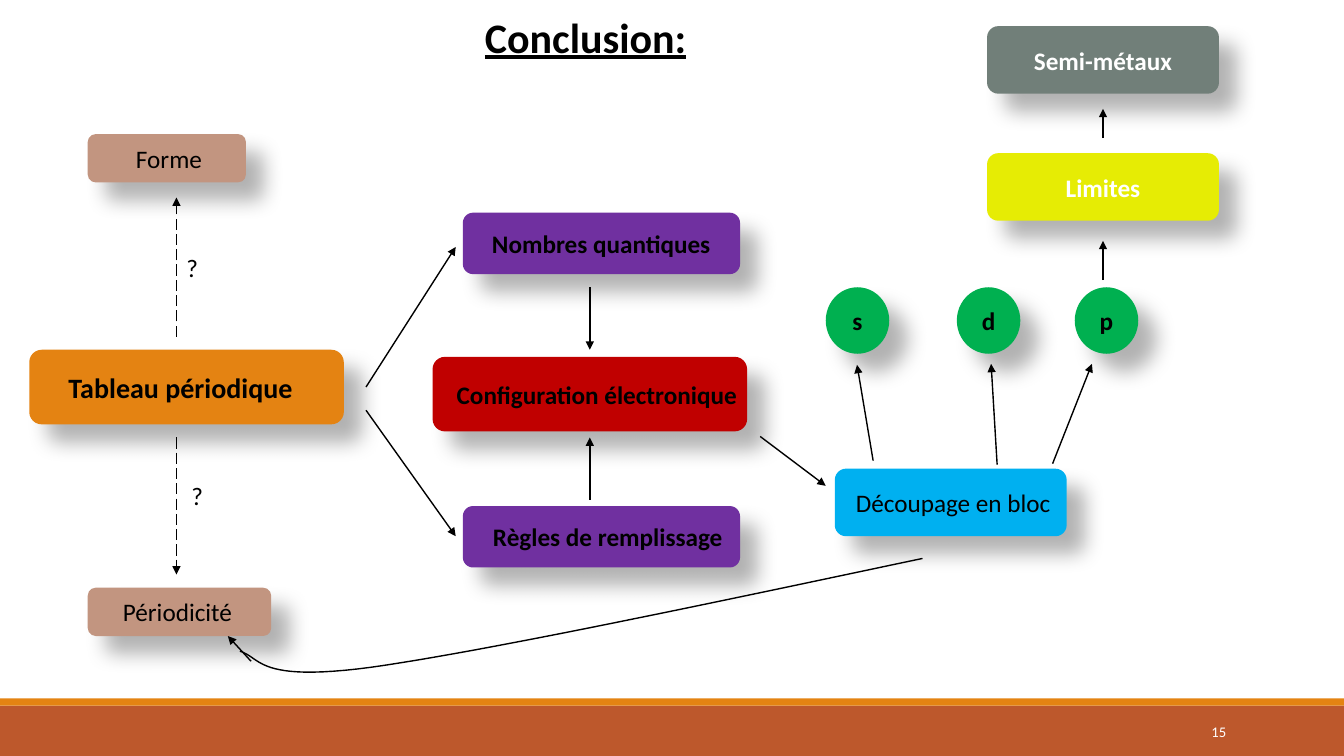
from dataclasses import dataclass

from lxml.etree import SubElement
from pptx import Presentation
from pptx.dml.color import RGBColor
from pptx.enum.dml import MSO_LINE
from pptx.enum.shapes import MSO_CONNECTOR, MSO_SHAPE
from pptx.enum.text import MSO_ANCHOR, MSO_AUTO_SIZE, PP_ALIGN
from pptx.oxml.ns import qn
from pptx.util import Inches, Pt


@dataclass(frozen=True)
class Theme:
    font: str = "Calibri"
    black: str = "000000"
    white: str = "FFFFFF"
    orange: str = "E48312"
    rust: str = "BD582C"
    purple: str = "7030A0"
    tan: str = "C29580"
    red: str = "C00000"
    blue: str = "00B0F0"
    green: str = "00B050"
    yellow: str = "E6EC04"
    grey: str = "717F79"
    title_size: float = 30
    main_size: float = 20
    body_size: float = 18
    number_size: float = 10.5
    line_width: float = 1


THEME = Theme()
TITLE = "Conclusion:"
PAGE_NUMBER = "15"
BANDS = [(7, 0.5, THEME.rust), (6.93, 0.07, THEME.orange)]  # top, height, fill

# label, (left, top, width, height), fill, text colour, bold, left edge of text (None: centred)
BOXES = [
    ("Tableau périodique", (0.29, 3.47, 3.12, 0.74), THEME.orange, THEME.black, True, 0.68),
    ("Nombres quantiques", (4.59, 2.11, 2.75, 0.61), THEME.purple, THEME.black, True, 4.88),
    ("Règles de remplissage", (4.59, 5.02, 2.75, 0.61), THEME.purple, THEME.black, True, 4.89),
    ("Configuration électronique", (4.29, 3.54, 3.12, 0.74), THEME.red, THEME.black, True, 4.53),
    ("Forme", (0.87, 1.33, 1.57, 0.48), THEME.tan, THEME.black, False, 1.35),
    ("Périodicité", (0.87, 5.83, 1.82, 0.48), THEME.tan, THEME.black, False, 1.22),
    ("Découpage en bloc", (8.28, 4.65, 2.3, 0.67), THEME.blue, THEME.black, False, 8.49),
    ("Limites", (9.79, 1.52, 2.3, 0.67), THEME.yellow, THEME.white, True, None),
    ("Semi-métaux", (9.79, 0.26, 2.3, 0.67), THEME.grey, THEME.white, True, None),
]
MAIN_BOX = "Tableau périodique"

BLOCKS = [("s", 8.19), ("d", 9.49), ("p", 10.66)]
BLOCK_TOP, BLOCK_WIDTH, BLOCK_HEIGHT = 2.85, 0.63, 0.66

QUESTIONS = [(1.75, 2.45), (1.8, 4.72)]
DASHED_ARROWS = [((1.75, 3.34), (1.75, 1.96)), ((1.75, 4.34), (1.75, 5.7))]
ARROWS = [
    ((3.63, 3.84), (4.52, 2.45)),
    ((3.63, 4.07), (4.52, 5.32)),
    ((5.85, 2.85), (5.85, 3.47)),
    ((5.85, 4.96), (5.85, 4.34)),
    ((7.54, 4.33), (8.19, 4.82)),
    ((2.49, 6.56), (2.26, 6.31)),
    ((8.66, 4.57), (8.5, 3.62)),
    ((9.89, 4.61), (9.83, 3.61)),
    ((10.44, 4.6), (10.83, 3.61)),
    ((10.94, 2.78), (10.94, 2.39)),
    ((10.94, 1.37), (10.94, 1.08)),
]
RETURN_CURVE = [
    ((9.15, 5.54), (6.98, 6), (4.81, 6.46), (3.68, 6.62)),
    ((3.68, 6.62), (2.55, 6.77), (2.6, 6.53), (2.38, 6.46)),
]
CURVE_STEPS = 24
ROUND_INSET = 0.05  # text inset of a rounded rectangle, as a share of its height


def write(frame, text, size, color=THEME.black, bold=False, align=PP_ALIGN.LEFT):
    frame.text = text
    frame.word_wrap = True
    para = frame.paragraphs[0]
    para.alignment = align
    font = para.runs[0].font
    font.name, font.size, font.bold = THEME.font, Pt(size), bold
    font.color.rgb = RGBColor.from_string(color)
    return font


def add_filled(page, kind, bounds, fill):
    shape = page.shapes.add_shape(kind, *map(Inches, bounds))
    shape.shadow.inherit = False
    shape.fill.solid()
    shape.fill.fore_color.rgb = RGBColor.from_string(fill)
    shape.line.fill.background()
    return shape


def add_shadow(shape):
    """Cast a soft black shadow towards the lower right."""
    effects = shape._element.spPr.find(qn("a:effectLst"))
    shadow = SubElement(effects, qn("a:outerShdw"), blurRad=str(Pt(15)), dist=str(Pt(18)),
                        dir=str(45 * 60000), algn="tl", rotWithShape="0")
    color = SubElement(shadow, qn("a:srgbClr"), val=THEME.black)
    SubElement(color, qn("a:alpha"), val="30000")


def add_label_shape(page, kind, label, bounds, fill, color, bold, text_left=None):
    shape = add_filled(page, kind, bounds, fill)
    add_shadow(shape)
    frame = shape.text_frame
    size = THEME.main_size if label == MAIN_BOX else THEME.body_size
    write(frame, label, size, color, bold, PP_ALIGN.CENTER if text_left is None else PP_ALIGN.LEFT)
    frame.vertical_anchor = MSO_ANCHOR.MIDDLE
    left, _, _, height = bounds
    frame.margin_left = frame.margin_right = frame.margin_top = frame.margin_bottom = 0
    if text_left is not None:
        frame.margin_left = Inches(text_left - left - ROUND_INSET * height)


def style_line(line):
    line.color.rgb = RGBColor.from_string(THEME.black)
    line.width = Pt(THEME.line_width)


def add_arrow(page, start, end, dashed=False):
    arrow = page.shapes.add_connector(MSO_CONNECTOR.STRAIGHT, *map(Inches, start + end))
    style_line(arrow.line)
    if dashed:
        arrow.line.dash_style = MSO_LINE.LONG_DASH
    SubElement(arrow.line._get_or_add_ln(), qn("a:tailEnd"), type="triangle")
    SubElement(arrow._element.spPr, qn("a:effectLst"))


def curve_point(segment, t):
    """Point at t, from 0 to 1, on a cubic Bézier segment."""
    weights = ((1 - t) ** 3, 3 * t * (1 - t) ** 2, 3 * t ** 2 * (1 - t), t ** 3)
    return tuple(Inches(sum(w * point[axis] for w, point in zip(weights, segment)))
                 for axis in (0, 1))


def add_curve(page, segments):
    points = [curve_point(segment, step / CURVE_STEPS)
              for segment in segments for step in range(1, CURVE_STEPS + 1)]
    builder = page.shapes.build_freeform(*curve_point(segments[0], 0))
    builder.add_line_segments(points, close=False)
    curve = builder.convert_to_shape()
    curve.shadow.inherit = False
    curve.fill.background()
    style_line(curve.line)


def add_text(page, text, bounds, size, color=THEME.black, align=PP_ALIGN.LEFT):
    box = page.shapes.add_textbox(*map(Inches, bounds))
    write(box.text_frame, text, size, color, align=align)
    box.text_frame.vertical_anchor = MSO_ANCHOR.MIDDLE


def add_title(page):
    title = page.shapes.title
    title.left, title.top, title.width, title.height = map(Inches, (4.71, 0.06, 3.65, 0.61))
    write(title.text_frame, TITLE, THEME.title_size, bold=True).underline = True
    title.text_frame.auto_size = MSO_AUTO_SIZE.NONE
    title.text_frame.vertical_anchor = MSO_ANCHOR.TOP


def main():
    deck = Presentation()
    deck.slide_width, deck.slide_height = Inches(13.33), Inches(7.5)
    page = deck.slides.add_slide(deck.slide_layouts[5])
    add_title(page)
    for top, height, fill in BANDS:
        add_filled(page, MSO_SHAPE.RECTANGLE, (0, top, 13.33, height), fill)
    add_text(page, PAGE_NUMBER, (10.83, 7.06, 1.43, 0.4), THEME.number_size,
             THEME.white, PP_ALIGN.RIGHT)
    for box in BOXES:
        add_label_shape(page, MSO_SHAPE.ROUNDED_RECTANGLE, *box)
    for label, left in BLOCKS:
        add_label_shape(page, MSO_SHAPE.OVAL, label, (left, BLOCK_TOP, BLOCK_WIDTH, BLOCK_HEIGHT),
                        THEME.green, THEME.black, True)
    for left, top in QUESTIONS:
        add_text(page, "?", (left, top, 0.69, 0.4), THEME.body_size)
    for start, end in DASHED_ARROWS:
        add_arrow(page, start, end, dashed=True)
    for start, end in ARROWS:
        add_arrow(page, start, end)
    add_curve(page, RETURN_CURVE)
    deck.save("out.pptx")


if __name__ == "__main__":
    main()
